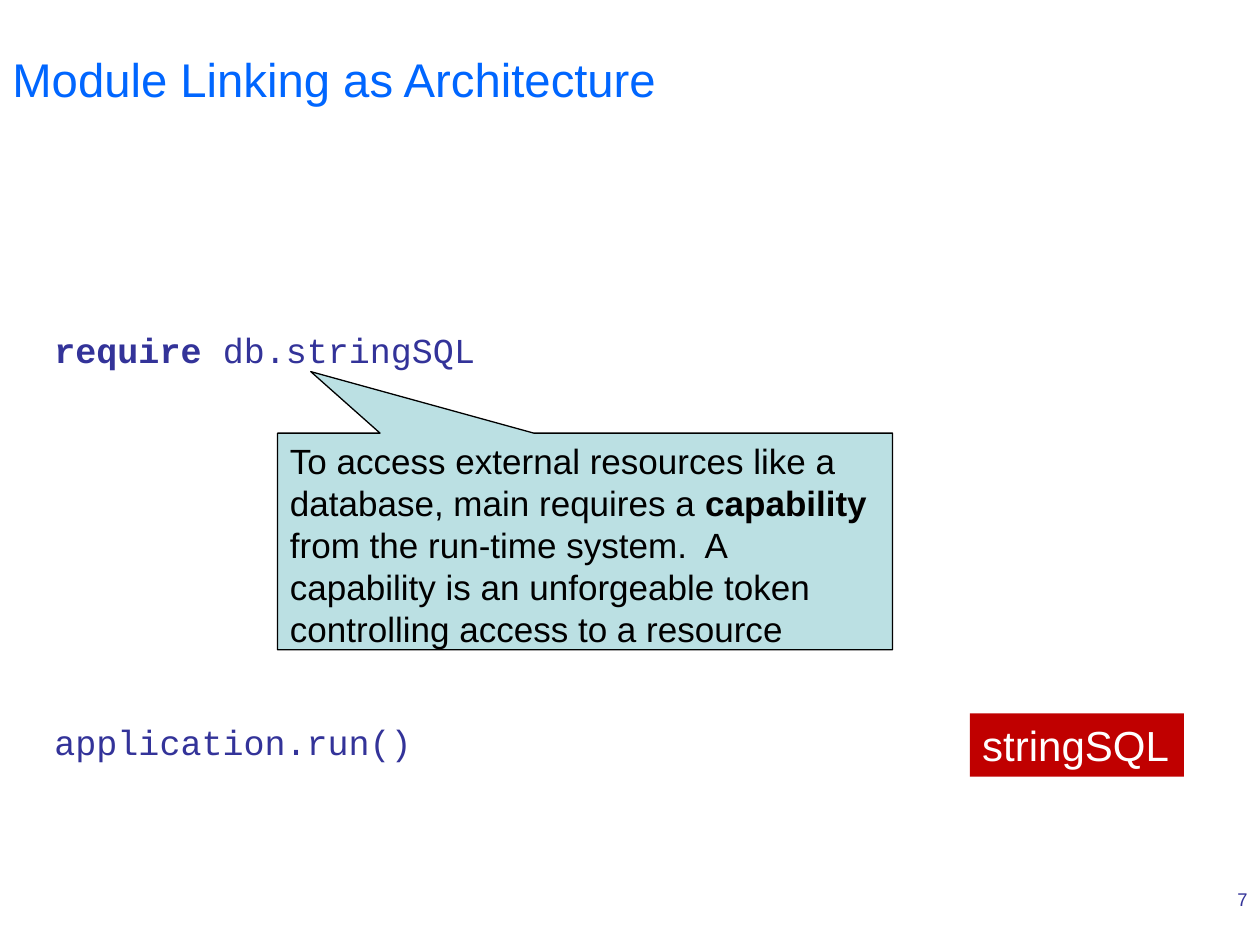
from pptx import Presentation
from pptx.dml.color import RGBColor
from pptx.enum import shapes, text
from pptx.util import Pt

BLUE, NAVY, BLACK, WHITE = "0066FF", "333399", "000000", "FFFFFF"
RED, PALE_TEAL = "C00000", "BBE0E3"
MONO = "Courier New"

TITLE = [("Module Linking as Architecture", False)]
CODE_LINES = [  # (top, runs)
    (184.3, [("require ", True), ("db.stringSQL", False)]),
    (408.3, [("application.run()", False)]),
]
CALLOUT = [
    ("To access external resources like a database, main requires a ", False),
    ("capability ", True),
    ("from the run-time system.  A capability is an unforgeable token "
     "controlling access to a resource", False),
]
CALLOUT_TIP = (-0.446, -0.784)
RESOURCE = [("stringSQL", False)]
PAGE_NUMBER = [("7", False)]


def color(hex_value):
    return RGBColor.from_string(hex_value)


def add_text(s, box, runs, kind=None, size=20, font="Arial", ink=BLACK,
             fill=None, line=None, wrap=True,
             align=text.PP_ALIGN.LEFT, anchor=text.MSO_ANCHOR.TOP):
    """Add a text box, or a shape of the given kind, holding (text, bold) runs."""
    box = [Pt(v) for v in box]
    if kind is None:
        sp = s.shapes.add_textbox(*box)
    else:
        sp = s.shapes.add_shape(kind, *box)
        sp.shadow.inherit = False
    if fill:
        sp.fill.solid()
        sp.fill.fore_color.rgb = color(fill)
    if line:
        sp.line.color.rgb = color(line)
        sp.line.width = Pt(0.75)
    else:
        sp.line.fill.background()
    tf = sp.text_frame
    tf.word_wrap = wrap
    tf.vertical_anchor = anchor
    p = tf.paragraphs[0]
    p.alignment = align
    for words, bold in runs:
        r = p.add_run()
        r.text = words
        r.font.name, r.font.size, r.font.bold = font, Pt(size), bold
        r.font.color.rgb = color(ink)
    return sp


def main():
    prs = Presentation()
    prs.slide_width, prs.slide_height = Pt(720), Pt(540)
    s = prs.slides.add_slide(prs.slide_layouts[6])

    add_text(s, (0, 0, 720, 90), TITLE, size=27, ink=BLUE,
             anchor=text.MSO_ANCHOR.MIDDLE)
    for top, runs in CODE_LINES:
        add_text(s, (24, top, 669, 30), runs, font=MONO, ink=NAVY)
    add_text(s, (540, 504, 180, 19.5), PAGE_NUMBER, size=10.5, ink=NAVY,
             align=text.PP_ALIGN.RIGHT)
    add_text(s, (554.2, 407.6, 122.4, 36.2), RESOURCE, size=24, ink=WHITE,
             kind=shapes.MSO_SHAPE.RECTANGLE, fill=RED, wrap=False)
    callout = add_text(s, (158.6, 247.5, 351.4, 123.8), CALLOUT,
                       kind=shapes.MSO_SHAPE.RECTANGULAR_CALLOUT,
                       fill=PALE_TEAL, line=BLACK)
    for i, offset in enumerate(CALLOUT_TIP):
        callout.adjustments[i] = offset

    prs.save("out.pptx")


if __name__ == "__main__":
    main()
